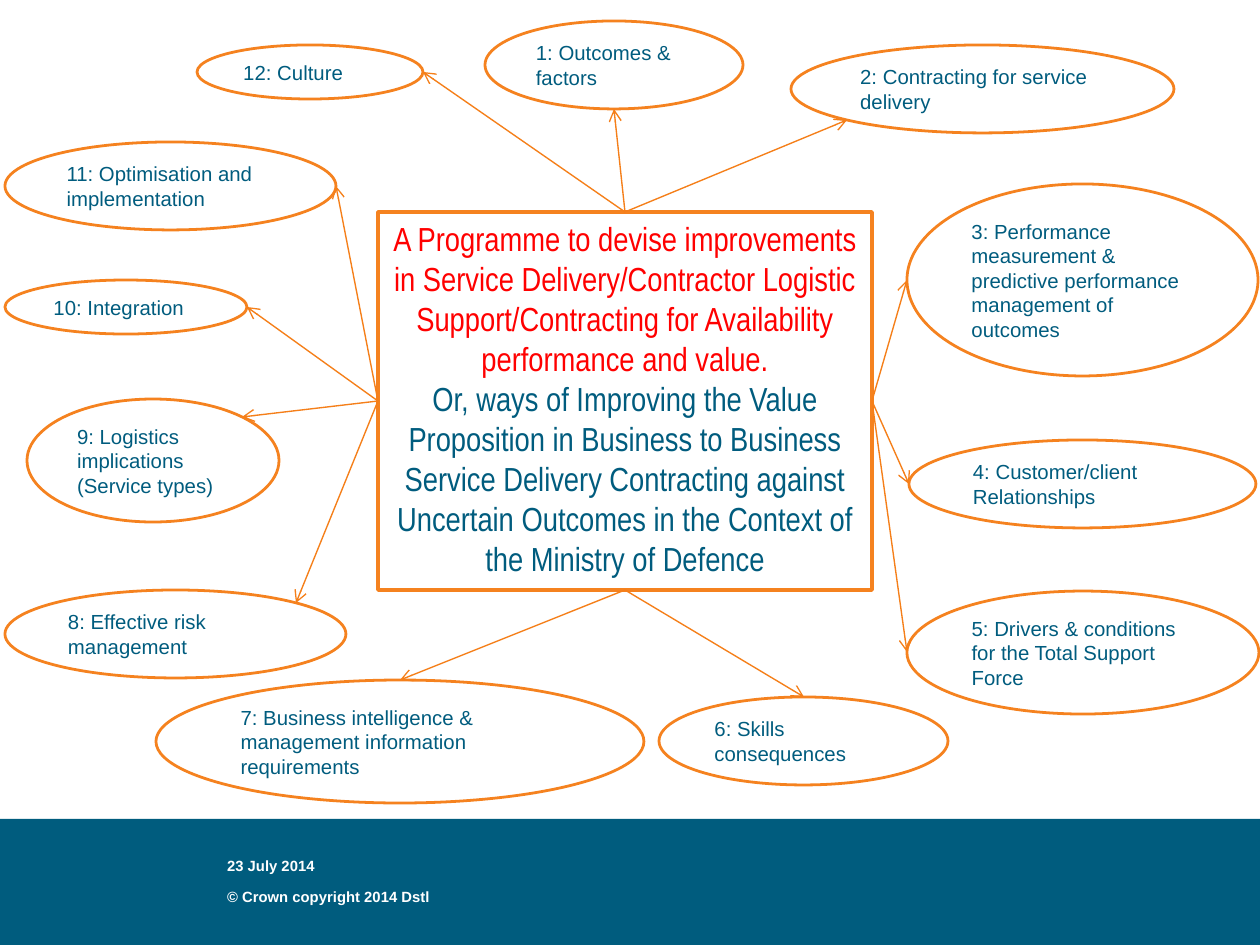
from lxml.etree import SubElement
from pptx import Presentation
from pptx.dml.color import RGBColor
from pptx.enum.shapes import MSO_CONNECTOR, MSO_SHAPE
from pptx.enum.text import MSO_ANCHOR, PP_ALIGN
from pptx.oxml.ns import qn
from pptx.util import Pt

SCALE = 6858
TEAL = RGBColor(0x00, 0x5C, 0x7E)
ORANGE = RGBColor(0xF5, 0x82, 0x1F)
ARROW = RGBColor(0xF5, 0x7F, 0x19)
RED = RGBColor(0xFF, 0x00, 0x00)
WHITE = RGBColor(0xFF, 0xFF, 0xFF)

NEAR, FAR = 0.146, 0.854
SITES = {
    "top": (0.5, 0), "left": (0, 0.5), "base": (0.5, 1), "right": (1, 0.5),
    "top right": (FAR, NEAR), "base left": (NEAR, FAR),
}

HUB = (378, 212, 494, 378)
TITLE = (
    "A Programme to devise improvements in Service Delivery/Contractor Logistic "
    "Support/Contracting for Availability performance and value.",
    "Or, ways of Improving the Value Proposition in Business to Business Service "
    "Delivery Contracting against Uncertain Outcomes in the Context of the Ministry of Defence",
)
THEMES = [
    ("1: Outcomes & factors", (485, 21, 258, 88), "top", "base"),
    ("2: Contracting for service delivery", (791, 45, 383, 88), "top", "base left"),
    ("3: Performance measurement & predictive performance\nmanagement of outcomes",
     (907, 184, 351, 192), "right", "left"),
    ("4: Customer/client\nRelationships", (909, 440, 347, 88), "right", "left"),
    ("5: Drivers & conditions for the Total Support Force", (907, 591, 352, 123), "right", "left"),
    ("6: Skills consequences", (659, 697, 289, 88), "base", "top"),
    ("7: Business intelligence &\nmanagement information\nrequirements",
     (156, 680, 488, 123), "base", "top"),
    ("8: Effective risk management", (5, 590, 341, 88), "left", "top right"),
    ("9: Logistics implications\n(Service types)", (27, 399, 252, 123), "left", "top right"),
    ("10: Integration", (5, 280, 242, 54), "left", "right"),
    ("11: Optimisation and implementation", (5, 142, 331, 88), "left", "right"),
    ("12: Culture", (197, 45, 226, 54), "top", "right"),
]


def write(frame, text, size=11, font="Arial", colors=(TEAL,), bold=False,
          align=PP_ALIGN.LEFT, anchor=MSO_ANCHOR.MIDDLE):
    frame.word_wrap = True
    frame.vertical_anchor = anchor
    frame.text = text
    for i, par in enumerate(frame.paragraphs):
        par.alignment = align
        par.font.size = Pt(size)
        par.font.name = font
        par.font.bold = bold
        par.font.color.rgb = colors[i % len(colors)]


def site(box, name):
    left, top, width, height = box
    across, down = SITES[name]
    return round(left + across * width), round(top + down * height)


class Deck:
    """Draw styled elements on the current slide in px."""

    def __init__(self, width, height):
        self.show = Presentation()
        self.show.slide_width = width * SCALE
        self.show.slide_height = height * SCALE
        self.slide = self.show.slides.add_slide(self.show.slide_layouts[6])

    def shape(self, kind, box, fill=None, line=None, weight=1.5):
        shape = self.slide.shapes.add_shape(kind, *(n * SCALE for n in box))
        shape.shadow.inherit = False
        if fill is None:
            shape.fill.background()
        else:
            shape.fill.solid()
            shape.fill.fore_color.rgb = fill
        if line is None:
            shape.line.fill.background()
        else:
            shape.line.color.rgb = line
            shape.line.width = Pt(weight)
        return shape

    def label(self, text, box, **style):
        frame = self.slide.shapes.add_textbox(*(n * SCALE for n in box)).text_frame
        frame.margin_left = frame.margin_right = 12 * SCALE
        write(frame, text, **style)

    def arrow(self, start, end):
        ends = (n * SCALE for n in start + end)
        link = self.slide.shapes.add_connector(MSO_CONNECTOR.STRAIGHT, *ends)
        link.line.color.rgb = ARROW
        link.line.width = Pt(0.75)
        SubElement(link.line._get_or_add_ln(), qn("a:tailEnd"), type="arrow")
        SubElement(link._element.spPr, qn("a:effectLst"))


def main():
    deck = Deck(1260, 945)
    deck.shape(MSO_SHAPE.RECTANGLE, (0, 819, 1260, 126), fill=TEAL)
    deck.label("© Crown copyright 2014 Dstl", (215, 881, 241, 41),
               size=8, colors=(WHITE,), bold=True, anchor=MSO_ANCHOR.TOP)
    deck.label("23 July 2014", (215, 840, 241, 41),
               size=8, colors=(WHITE,), bold=True, anchor=MSO_ANCHOR.BOTTOM)

    hub = deck.shape(MSO_SHAPE.RECTANGLE, HUB, line=ORANGE, weight=2)
    write(hub.text_frame, "\n".join(TITLE), size=18, font="Arial Narrow",
          colors=(RED, TEAL), align=PP_ALIGN.CENTER, anchor=MSO_ANCHOR.TOP)

    for text, box, start, end in THEMES:
        theme = deck.shape(MSO_SHAPE.OVAL, box, line=ORANGE)
        write(theme.text_frame, text)
        deck.arrow(site(HUB, start), site(box, end))

    deck.show.save("out.pptx")


if __name__ == "__main__":
    main()
